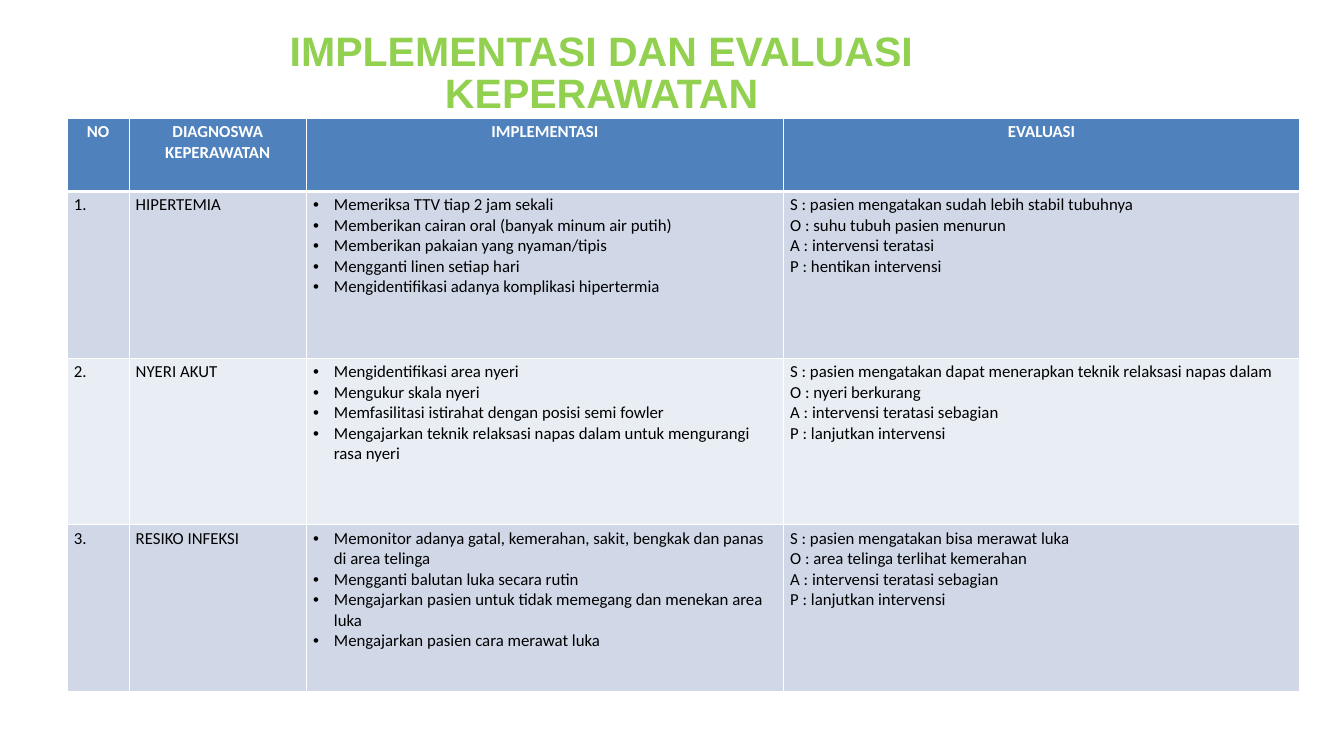
from dataclasses import dataclass

from lxml import etree
from pptx import Presentation
from pptx import util as u
from pptx.dml.color import RGBColor
from pptx.enum import text
from pptx.oxml import ns


@dataclass(frozen=True)
class Theme:
    title: str = "92D050"
    header: str = "4F81BD"
    bands: tuple = ("D0D8E8", "E9EDF4")
    white: str = "FFFFFF"
    ink: str = "000000"
    title_font: str = "Arial"
    body_font: str = "Calibri"
    title_size: int = 44
    title_leading: int = 45
    body_size: int = 18
    rule: int = 1
    header_rule: int = 3
    indent: float = 0.31


HEADERS = ["NO", "DIAGNOSWA KEPERAWATAN", "IMPLEMENTASI", "EVALUASI"]
CARE_PLAN = [
    ("HIPERTEMIA",
     ["Memeriksa TTV tiap 2 jam sekali",
      "Memberikan cairan oral (banyak minum air putih)",
      "Memberikan pakaian yang nyaman/tipis",
      "Mengganti linen setiap hari",
      "Mengidentifikasi adanya komplikasi hipertermia"],
     ["pasien mengatakan sudah lebih stabil tubuhnya",
      "suhu tubuh pasien menurun",
      "intervensi teratasi",
      "hentikan intervensi"]),
    ("NYERI AKUT",
     ["Mengidentifikasi area nyeri",
      "Mengukur skala nyeri",
      "Memfasilitasi istirahat dengan posisi semi fowler",
      "Mengajarkan teknik relaksasi napas dalam untuk mengurangi rasa nyeri"],
     ["pasien mengatakan dapat menerapkan teknik relaksasi napas dalam",
      "nyeri berkurang",
      "intervensi teratasi sebagian",
      "lanjutkan intervensi"]),
    ("RESIKO INFEKSI",
     ["Memonitor adanya gatal, kemerahan, sakit, bengkak dan panas di area telinga",
      "Mengganti balutan luka secara rutin",
      "Mengajarkan pasien untuk tidak memegang dan menekan area luka",
      "Mengajarkan pasien cara merawat luka"],
     ["pasien mengatakan bisa merawat luka",
      "area telinga terlihat kemerahan",
      "intervensi teratasi sebagian",
      "lanjutkan intervensi"]),
]
COLUMN_WIDTHS = [0.92, 2.64, 7.1, 7.68]
ROW_HEIGHTS = [1.09] + [2.48] * len(CARE_PLAN)


class SlideBuilder:
    def __init__(self, s, theme):
        self.s = s
        self.theme = theme

    def add_run(self, p, words, font, size, color, bold=False):
        r = p.add_run()
        r.text = words
        r.font.name = font
        r.font.size = u.Pt(size)
        r.font.bold = bold
        r.font.color.rgb = RGBColor.from_string(color)

    def title(self, words, x, y, w, h):
        t = self.theme
        tf = self.s.shapes.add_textbox(*map(u.Inches, (x, y, w, h))).text_frame
        tf.word_wrap = True
        tf.auto_size = text.MSO_AUTO_SIZE.SHAPE_TO_FIT_TEXT
        tf.margin_left = tf.margin_top = tf.margin_right = tf.margin_bottom = 0
        p = tf.paragraphs[0]
        p.alignment = text.PP_ALIGN.CENTER
        p.line_spacing = u.Pt(t.title_leading)
        self.add_run(p, words, t.title_font, t.title_size, t.title, True)

    def bullet(self, p):
        pPr = p._p.get_or_add_pPr()
        indent = u.Inches(self.theme.indent)
        pPr.set("marL", str(indent))
        pPr.set("indent", str(-indent))
        etree.SubElement(pPr, ns.qn("a:buFont"), typeface="Arial")
        etree.SubElement(pPr, ns.qn("a:buChar"), char="•")

    def borders(self, cell, top, bottom):
        t = self.theme
        tcPr = cell._tc.get_or_add_tcPr()
        for side, width in zip("LRTB", (t.rule, t.rule, top, bottom)):
            ln = etree.SubElement(tcPr, ns.qn(f"a:ln{side}"), w=str(u.Pt(width)))
            fill = etree.SubElement(ln, ns.qn("a:solidFill"))
            etree.SubElement(fill, ns.qn("a:srgbClr"), val=t.white)

    def cell(self, cell, lines, row, bulleted=False):
        t = self.theme
        header = row == 0
        self.borders(cell,
                     t.header_rule if row == 1 else t.rule,
                     t.header_rule if header else t.rule)
        cell.fill.solid()
        fill = t.header if header else t.bands[(row - 1) % 2]
        cell.fill.fore_color.rgb = RGBColor.from_string(fill)
        tf = cell.text_frame
        for i, line in enumerate(lines):
            p = tf.add_paragraph() if i else tf.paragraphs[0]
            p.alignment = text.PP_ALIGN.CENTER if header else text.PP_ALIGN.LEFT
            if bulleted:
                self.bullet(p)
            self.add_run(p, line, t.body_font, t.body_size,
                         t.white if header else t.ink, header)

    def table(self, rows, x, y, widths, heights, bullet_column):
        table = self.s.shapes.add_table(
            len(heights), len(widths),
            *map(u.Inches, (x, y, sum(widths), sum(heights)))).table
        for column, width in zip(table.columns, widths):
            column.width = u.Inches(width)
        for row, height in zip(table.rows, heights):
            row.height = u.Inches(height)
        for i, row in enumerate(rows):
            for j, lines in enumerate(row):
                self.cell(table.cell(i, j), lines, i, i > 0 and j == bullet_column)


def main():
    prs = Presentation()
    prs.slide_width, prs.slide_height = u.Inches(20), u.Inches(11.25)
    builder = SlideBuilder(prs.slides.add_slide(prs.slide_layouts[6]), Theme())

    rows = [[[header] for header in HEADERS]]
    for number, (diagnosis, actions, outcomes) in enumerate(CARE_PLAN, 1):
        evaluation = [f"{key} : {outcome}" for key, outcome in zip("SOAP", outcomes)]
        rows.append([[f"{number}."], [diagnosis], actions, evaluation])

    builder.title("IMPLEMENTASI DAN EVALUASI KEPERAWATAN", 2.83, 0.49, 12.25, 1.27)
    builder.table(rows, 1, 1.76, COLUMN_WIDTHS, ROW_HEIGHTS, bullet_column=2)
    prs.save("out.pptx")


if __name__ == "__main__":
    main()
